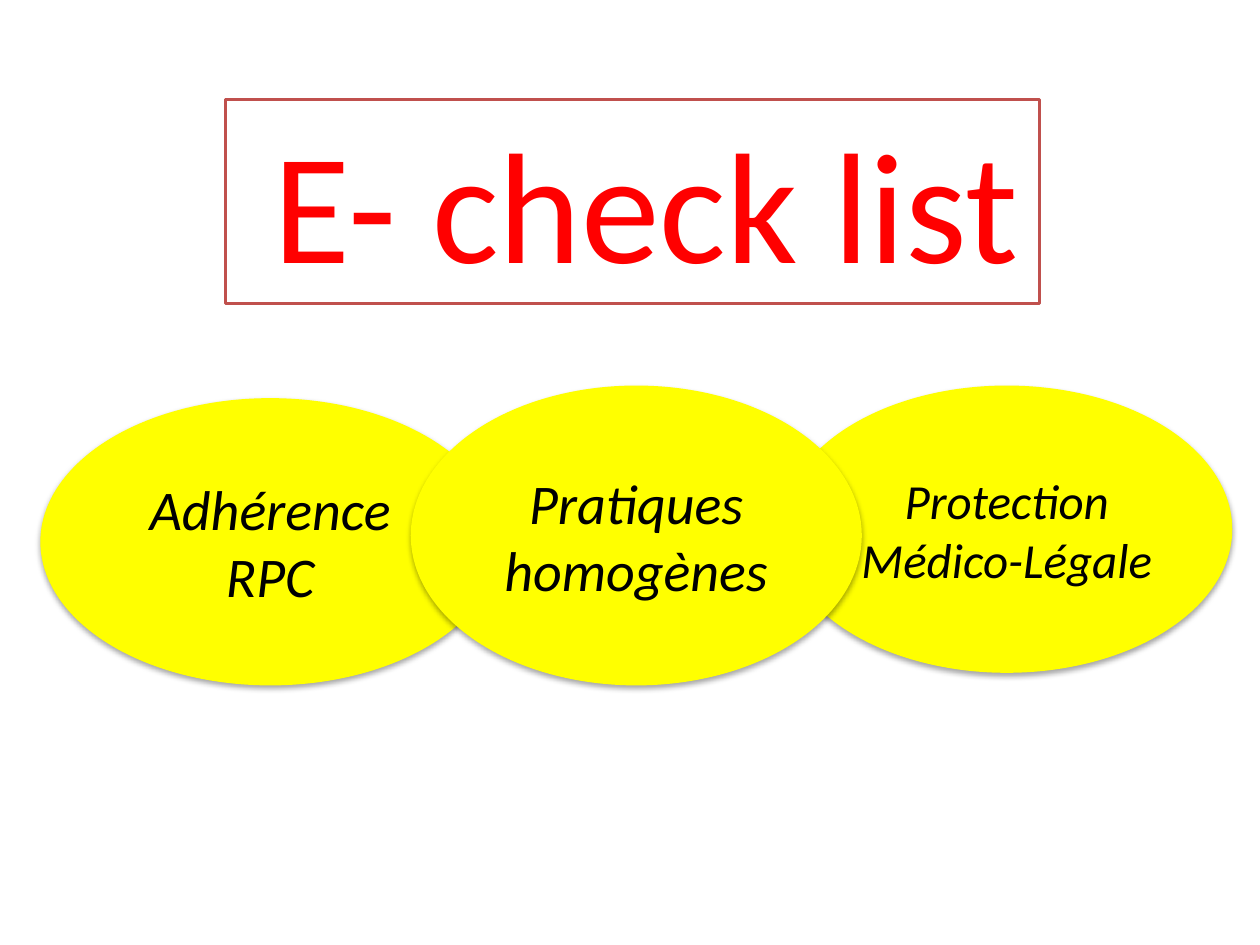
from dataclasses import dataclass

from lxml.etree import SubElement
from pptx import Presentation
from pptx.dml.color import RGBColor
from pptx.enum.shapes import MSO_SHAPE
from pptx.enum.text import MSO_ANCHOR, MSO_AUTO_SIZE, PP_ALIGN
from pptx.oxml.ns import qn
from pptx.shapes.autoshape import Shape
from pptx.slide import Slide
from pptx.util import Inches, Pt


@dataclass(frozen=True)
class Theme:
    font: str = "Calibri"
    title_size: int = 90
    benefit_size: int = 32
    long_benefit_size: int = 28
    title: RGBColor = RGBColor(0xFF, 0x00, 0x00)
    frame: RGBColor = RGBColor(0xC0, 0x50, 0x4D)
    paper: RGBColor = RGBColor(0xFF, 0xFF, 0xFF)
    oval: RGBColor = RGBColor(0xFF, 0xFF, 0x00)
    ink: RGBColor = RGBColor(0x00, 0x00, 0x00)


THEME = Theme()


@dataclass(frozen=True)
class Benefit:
    label: str
    left: float
    top: float
    width: float
    height: float
    size: int = THEME.benefit_size


BENEFITS = (
    Benefit("Adhérence RPC", 0.32, 3.16, 3.65, 2.28),
    Benefit("Protection Médico-Légale", 6.2, 3.06, 3.58, 2.28, THEME.long_benefit_size),
    Benefit("Pratiques homogènes", 3.26, 3.06, 3.58, 2.38),
)


def write_text(shape: Shape, text: str, *, size: int, color: RGBColor,
               align: PP_ALIGN, anchor: MSO_ANCHOR,
               italic: bool = False, wrap: bool = True) -> None:
    frame = shape.text_frame
    frame.word_wrap = wrap
    frame.vertical_anchor = anchor
    paragraph = frame.paragraphs[0]
    paragraph.alignment = align
    run = paragraph.add_run()
    run.text = text
    run.font.name = THEME.font
    run.font.size = Pt(size)
    run.font.italic = italic
    run.font.color.rgb = color


def cast_shadow(shape: Shape) -> None:
    shape.shadow.inherit = False
    effects = shape.element.spPr.find(qn("a:effectLst"))
    shadow = SubElement(effects, qn("a:outerShdw"), blurRad=str(Pt(3.1)),
                        dist=str(Pt(1.8)), dir=str(90 * 60000), rotWithShape="0")
    color = SubElement(shadow, qn("a:srgbClr"), val=str(THEME.ink))
    SubElement(color, qn("a:alpha"), val="35000")


def draw_benefit(slide: Slide, benefit: Benefit) -> None:
    oval = slide.shapes.add_shape(
        MSO_SHAPE.OVAL, Inches(benefit.left), Inches(benefit.top),
        Inches(benefit.width), Inches(benefit.height))
    oval.fill.solid()
    oval.fill.fore_color.rgb = THEME.oval
    oval.line.fill.background()
    cast_shadow(oval)
    write_text(oval, benefit.label, size=benefit.size, color=THEME.ink,
               align=PP_ALIGN.CENTER, anchor=MSO_ANCHOR.MIDDLE, italic=True)


def draw_title(slide: Slide, text: str) -> None:
    title = slide.shapes.add_shape(
        MSO_SHAPE.RECTANGLE, Inches(1.79), Inches(0.79), Inches(6.46), Inches(1.62))
    title.shadow.inherit = False
    title.fill.solid()
    title.fill.fore_color.rgb = THEME.paper
    title.line.color.rgb = THEME.frame
    title.line.width = Pt(2)
    write_text(title, text, size=THEME.title_size, color=THEME.title,
               align=PP_ALIGN.LEFT, anchor=MSO_ANCHOR.TOP, wrap=False)
    title.text_frame.auto_size = MSO_AUTO_SIZE.SHAPE_TO_FIT_TEXT


def main() -> None:
    deck = Presentation()
    deck.slide_width, deck.slide_height = Inches(10), Inches(7.5)
    slide = deck.slides.add_slide(deck.slide_layouts[6])
    for benefit in BENEFITS:
        draw_benefit(slide, benefit)
    draw_title(slide, " E- check list")
    deck.save("out.pptx")


if __name__ == "__main__":
    main()
